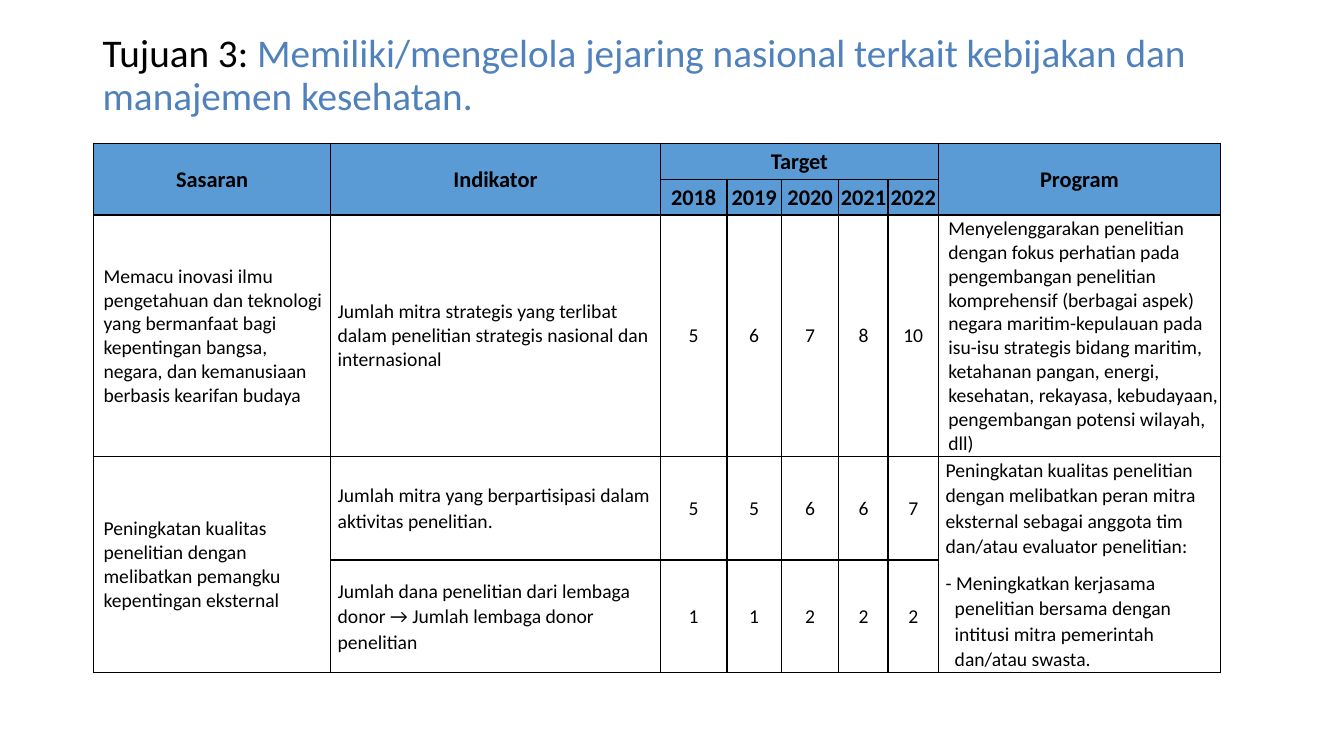
from dataclasses import dataclass

from lxml import etree
from pptx import Presentation
from pptx import util as u
from pptx.dml.color import RGBColor
from pptx.enum import text
from pptx.oxml import ns

BLACK = RGBColor(0x00, 0x00, 0x00)
WHITE = RGBColor(0xFF, 0xFF, 0xFF)
TITLE_BLUE = RGBColor(0x4F, 0x81, 0xBD)
HEADER_BLUE = RGBColor(0x5B, 0x9B, 0xD5)
FONT = "Calibri"
HANG = u.Cm(0.23)
BORDER = u.Pt(1)

COLUMN_WIDTHS = [5.97, 8.31, 1.68, 1.37, 1.45, 1.24, 1.27, 7.11]
ROW_HEIGHTS = [0.9, 0.9, 6.08, 2.61, 2.84]
HEADER_ROWS = 2
FIRST_YEAR_COLUMN = 2
PROGRAM_COLUMN = 7


@dataclass(frozen=True)
class CellStyle:
    fill: RGBColor = WHITE
    size: int = 14
    bold: bool = False
    align: text.PP_ALIGN = text.PP_ALIGN.LEFT
    side_margin: float = 0.02
    left_indent: int = 0
    spaced: bool = False


@dataclass(frozen=True)
class Entry:
    row: int
    column: int
    lines: tuple[str, ...]
    style: CellStyle
    row_span: int = 1
    column_span: int = 1


HEADER = CellStyle(HEADER_BLUE, 16, True, text.PP_ALIGN.CENTER)
NUMBER = CellStyle(align=text.PP_ALIGN.CENTER)
INDENTED = CellStyle(left_indent=HANG)
INSET = CellStyle(side_margin=0.18)
SPACED = CellStyle(side_margin=0.18, spaced=True)

YEARS = range(2018, 2023)
TARGETS = {2: (5, 6, 7, 8, 10), 3: (5, 5, 6, 6, 7), 4: (1, 1, 2, 2, 2)}

ENTRIES = [
    Entry(0, 0, ("Sasaran",), HEADER, row_span=2),
    Entry(0, 1, ("Indikator",), HEADER, row_span=2),
    Entry(0, FIRST_YEAR_COLUMN, ("Target",), HEADER, column_span=len(YEARS)),
    Entry(0, PROGRAM_COLUMN, ("Program",), HEADER, row_span=2),
    Entry(2, 0, ("Memacu inovasi ilmu pengetahuan dan teknologi yang bermanfaat bagi "
                 "kepentingan bangsa, negara, dan kemanusiaan berbasis kearifan budaya",), INDENTED),
    Entry(2, 1, ("Jumlah mitra strategis yang terlibat dalam penelitian strategis "
                 "nasional dan internasional",), INSET),
    Entry(2, PROGRAM_COLUMN, (
        "Menyelenggarakan penelitian dengan fokus perhatian pada pengembangan penelitian "
        "komprehensif (berbagai aspek) negara maritim-kepulauan pada isu-isu strategis bidang "
        "maritim, ketahanan pangan, energi, kesehatan, rekayasa, kebudayaan, pengembangan "
        "potensi wilayah, dll)",), INDENTED),
    Entry(3, 0, ("Peningkatan kualitas penelitian dengan melibatkan pemangku kepentingan "
                 "eksternal",), INDENTED, row_span=2),
    Entry(3, 1, ("Jumlah mitra yang berpartisipasi dalam aktivitas penelitian.",), SPACED),
    Entry(3, PROGRAM_COLUMN, (
        "Peningkatan kualitas penelitian dengan melibatkan peran mitra eksternal sebagai "
        "anggota tim dan/atau evaluator penelitian:",
        "- Meningkatkan kerjasama penelitian bersama dengan intitusi mitra pemerintah "
        "dan/atau swasta."), SPACED, row_span=2),
    Entry(4, 1, ("Jumlah dana penelitian dari lembaga donor → Jumlah lembaga donor "
                 "penelitian",), SPACED),
]
for row, values in {1: YEARS, **TARGETS}.items():
    style = HEADER if row < HEADER_ROWS else NUMBER
    ENTRIES += [Entry(row, FIRST_YEAR_COLUMN + offset, (str(value),), style)
                for offset, value in enumerate(values)]


def apply_format(target: object, values: dict[str, object]) -> None:
    for name, value in values.items():
        setattr(target, name, value)


def add_span(para, words: str, size: int, color: RGBColor, bold: bool = False) -> None:
    span = para.add_run()
    span.text = words
    apply_format(span.font, {"name": FONT, "size": u.Pt(size), "bold": bold})
    span.font.color.rgb = color


def add_borders(cell) -> None:
    properties = cell._tc.get_or_add_tcPr()
    for index, side in enumerate(("lnL", "lnR", "lnT", "lnB")):
        line = etree.Element(ns.qn(f"a:{side}"), w=str(int(BORDER)))
        fill = etree.SubElement(line, ns.qn("a:solidFill"))
        etree.SubElement(fill, ns.qn("a:srgbClr"), val=str(BLACK))
        properties.insert(index, line)


def fill_cell(cell, entry: Entry) -> None:
    style = entry.style
    side = u.Cm(style.side_margin)
    apply_format(cell, {
        "margin_left": side, "margin_right": side,
        "margin_top": 0 if style.side_margin > 0.1 else side, "margin_bottom": 0,
        "vertical_anchor": text.MSO_ANCHOR.MIDDLE,
    })
    for index, line in enumerate(entry.lines):
        para = cell.text_frame.add_paragraph() if index else cell.text_frame.paragraphs[0]
        hanging = line.startswith("- ")
        indent = HANG if hanging else style.left_indent
        if indent:
            para._p.get_or_add_pPr().set("marL", str(int(indent)))
        if hanging:
            para._p.get_or_add_pPr().set("indent", str(-int(HANG)))
        para.alignment = style.align
        if style.spaced:
            apply_format(para, {"line_spacing": 1.07, "space_after": u.Pt(8)})
        add_span(para, line, style.size, BLACK, style.bold)


def add_title(page) -> None:
    box = page.shapes.add_textbox(u.Cm(2.34), u.Cm(1.02), u.Cm(28.4), u.Cm(1.8))
    apply_format(box.text_frame, {
        "word_wrap": True, "vertical_anchor": text.MSO_ANCHOR.MIDDLE,
    })
    para = box.text_frame.paragraphs[0]
    para.line_spacing = 0.9
    add_span(para, "Tujuan 3: ", 28, BLACK)
    add_span(para, "Memiliki/mengelola jejaring nasional terkait kebijakan dan "
                   "manajemen kesehatan.", 28, TITLE_BLUE)


def add_target_table(page) -> None:
    frame = page.shapes.add_table(
        len(ROW_HEIGHTS), len(COLUMN_WIDTHS), u.Cm(2.36), u.Cm(3.62),
        u.Cm(sum(COLUMN_WIDTHS)), u.Cm(sum(ROW_HEIGHTS)))
    table = frame.table
    apply_format(table, {"first_row": False, "horz_banding": False})
    for column, width in zip(table.columns, COLUMN_WIDTHS):
        column.width = u.Cm(width)
    for row, height in zip(table.rows, ROW_HEIGHTS):
        row.height = u.Cm(height)
    for entry in ENTRIES:
        cell = table.cell(entry.row, entry.column)
        if entry.row_span > 1 or entry.column_span > 1:
            cell.merge(table.cell(entry.row + entry.row_span - 1,
                                  entry.column + entry.column_span - 1))
        fill_cell(cell, entry)
    for index, row in enumerate(table.rows):
        for cell in row.cells:
            cell.fill.solid()
            cell.fill.fore_color.rgb = HEADER_BLUE if index < HEADER_ROWS else WHITE
            add_borders(cell)


def main() -> None:
    deck = Presentation()
    apply_format(deck, {"slide_width": u.Cm(33.87), "slide_height": u.Cm(19.05)})
    page = deck.slides.add_slide(deck.slide_layouts[6])
    add_title(page)
    add_target_table(page)
    deck.save("out.pptx")


if __name__ == "__main__":
    main()
